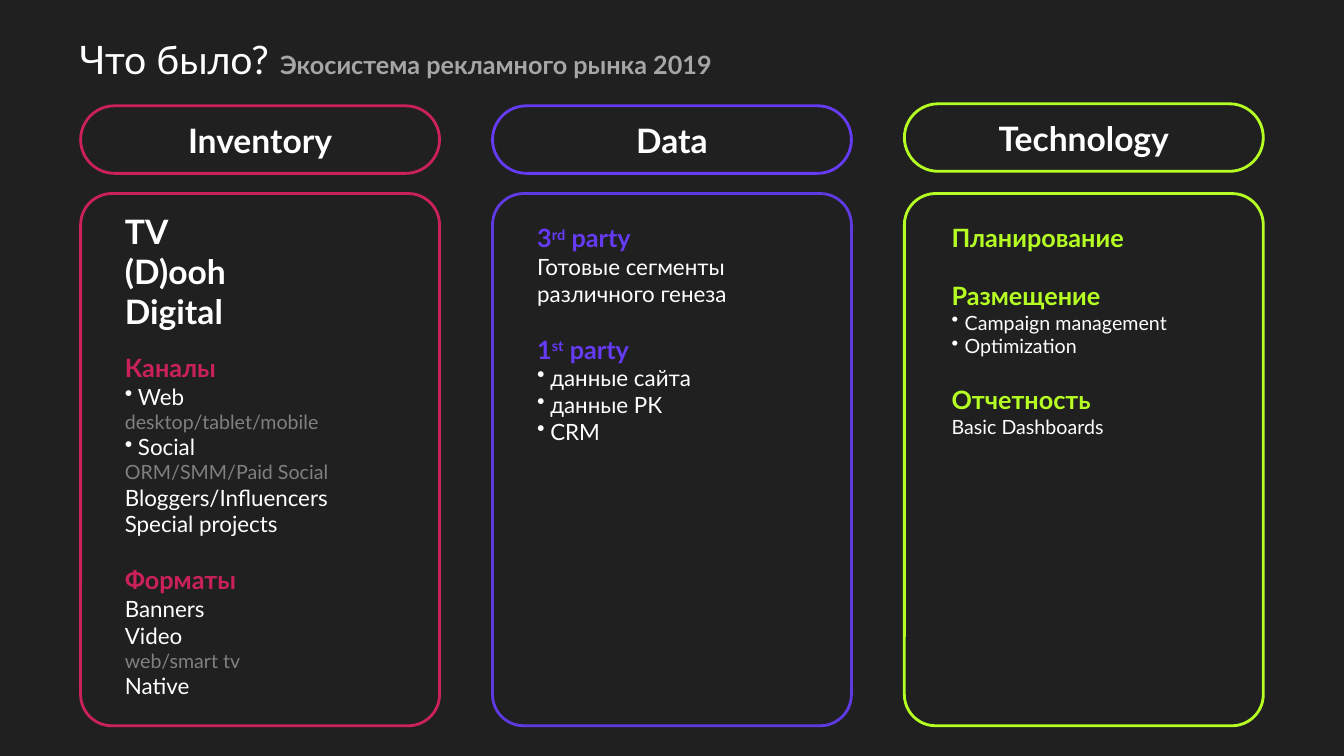
from dataclasses import dataclass

import lxml.etree
import pptx
import pptx.dml.color
import pptx.enum.shapes
import pptx.enum.text
import pptx.oxml.ns
import pptx.slide
import pptx.text.text
import pptx.util

Inches = pptx.util.Inches
Pt = pptx.util.Pt
Align = pptx.enum.text.PP_ALIGN
Anchor = pptx.enum.text.MSO_ANCHOR
Outline = pptx.enum.shapes.MSO_SHAPE

FONT = "Lato"
WHITE = "FFFFFF"
GREY = "808080"
CRIMSON = "CA2159"
VIOLET = "653BF5"
LIME = "B5FF23"

COLUMN_LEFT, COLUMN_STEP, COLUMN_WIDTH = 0.8, 4.085, 3.56
SECTION_GAP = 19.5
BULLET_INDENT = 0.13


@dataclass
class Line:
    """One paragraph; text between carets is superscript."""
    text: str
    size: float = 16
    color: str = WHITE
    bold: bool = False
    bullet: bool = False
    gap: float = 0


@dataclass
class TextBlock:
    left: float
    top: float
    width: float
    height: float
    lines: list[Line]


@dataclass
class Column:
    heading: str
    heading_top: float
    color: str
    panel_color: str
    blocks: list[TextBlock]


def rgb(color: str) -> pptx.dml.color.RGBColor:
    return pptx.dml.color.RGBColor.from_string(color)


def section(text: str, color: str, gap: float = SECTION_GAP) -> Line:
    return Line(text, 18, color, bold=True, gap=gap)


def item(text: str, size: float = 16) -> Line:
    return Line(text, size, bullet=True)


def detail(text: str) -> Line:
    return Line(text, 14, GREY)


def write_line(paragraph: pptx.text.text._Paragraph, line: Line) -> None:
    for index, part in enumerate(line.text.split("^")):
        run = paragraph.add_run()
        run.text = part
        if index % 2:
            run._r.get_or_add_rPr().set("baseline", "30000")
    if line.gap:
        paragraph.space_before = Pt(line.gap)
    if line.bullet:
        properties = paragraph._p.get_or_add_pPr()
        properties.set("marL", str(Inches(BULLET_INDENT)))
        properties.set("indent", str(-Inches(BULLET_INDENT)))
        bullet = lxml.etree.SubElement(properties, pptx.oxml.ns.qn("a:buChar"))
        bullet.set("char", "•")
    paragraph.font.name = FONT
    paragraph.font.size = Pt(line.size)
    paragraph.font.bold = line.bold
    paragraph.font.color.rgb = rgb(line.color)


def add_text(slide: pptx.slide.Slide, block: TextBlock) -> None:
    frame = slide.shapes.add_textbox(
        Inches(block.left), Inches(block.top), Inches(block.width), Inches(block.height)
    ).text_frame
    frame.word_wrap = True
    for index, line in enumerate(block.lines):
        write_line(frame.add_paragraph() if index else frame.paragraphs[0], line)


def add_outline(slide: pptx.slide.Slide, kind: Outline, left: float, top: float,
                height: float, color: str, corners: list[float]):
    outline = slide.shapes.add_shape(
        kind, Inches(left), Inches(top), Inches(COLUMN_WIDTH), Inches(height)
    )
    outline.shadow.inherit = False
    outline.fill.background()
    outline.line.color.rgb = rgb(color)
    outline.line.width = Pt(2)
    for index, corner in enumerate(corners):
        outline.adjustments[index] = corner
    return outline


def add_column(slide: pptx.slide.Slide, left: float, column: Column) -> None:
    heading = add_outline(slide, Outline.ROUND_2_DIAG_RECTANGLE, left,
                          column.heading_top, 0.67, column.color, [0.5, 0.5])
    heading.text_frame.vertical_anchor = Anchor.MIDDLE
    paragraph = heading.text_frame.paragraphs[0]
    paragraph.alignment = Align.CENTER
    write_line(paragraph, Line(column.heading, 24, bold=True))
    add_outline(slide, Outline.ROUNDED_RECTANGLE, left, 1.92, 5.28,
                column.panel_color, [0.087])
    for block in column.blocks:
        add_text(slide, block)


def add_title(slide: pptx.slide.Slide) -> None:
    title = slide.shapes.title
    title.left, title.top = Inches(0.69), Inches(0.4)
    title.width, title.height = Inches(5.66), Inches(0.42)
    frame = title.text_frame
    frame.auto_size = pptx.enum.text.MSO_AUTO_SIZE.NONE
    frame.vertical_anchor = Anchor.MIDDLE
    paragraph = frame.paragraphs[0]
    paragraph.alignment = Align.LEFT
    paragraph.line_spacing = 0.9
    write_line(paragraph, Line("Что было?", 28))


COLUMNS = [
    Column("Inventory", 1.05, CRIMSON, CRIMSON, [
        TextBlock(1.14, 2.04, 2.89, 1.31, [
            Line(medium, 24, bold=True) for medium in ("TV", "(D)ooh", "Digital")
        ]),
        TextBlock(1.14, 3.45, 2.89, 3.57, [
            section("Каналы", CRIMSON, gap=0),
            item("Web"),
            detail("desktop/tablet/mobile"),
            item("Social"),
            detail("ORM/SMM/Paid Social"),
            Line("Bloggers/Influencers"),
            Line("Special projects"),
            section("Форматы", CRIMSON),
            Line("Banners"),
            Line("Video"),
            detail("web/smart tv"),
            Line("Native"),
        ]),
    ]),
    Column("Data", 1.05, VIOLET, "5F39E2", [
        TextBlock(5.23, 2.16, 2.62, 2.59, [
            section("3^rd^ party", VIOLET, gap=0),
            Line("Готовые сегменты различного генеза"),
            section("1^st^ party", VIOLET),
            item("данные сайта"),
            item("данные РК"),
            item("CRM"),
        ]),
    ]),
    Column("Technology", 1.03, LIME, LIME, [
        TextBlock(9.34, 2.16, 2.86, 2.26, [
            section("Планирование", LIME, gap=0),
            section("Размещение", LIME),
            item("Campaign management", 14),
            item("Optimization", 14),
            section("Отчетность", LIME),
            Line("Basic Dashboards", 14),
        ]),
    ]),
]


def main() -> None:
    deck = pptx.Presentation()
    deck.slide_width, deck.slide_height = Inches(13.33), Inches(7.5)
    slide = deck.slides.add_slide(deck.slide_layouts.get_by_name("Title Only"))
    slide.background.fill.solid()
    slide.background.fill.fore_color.rgb = rgb("202020")
    add_title(slide)
    add_text(slide, TextBlock(2.68, 0.44, 6.39, 0.4, [
        Line("Экосистема рекламного рынка 2019", 18, "A6A6A6", bold=True)
    ]))
    for index, column in enumerate(COLUMNS):
        add_column(slide, COLUMN_LEFT + index * COLUMN_STEP, column)
    deck.save("out.pptx")


if __name__ == "__main__":
    main()
